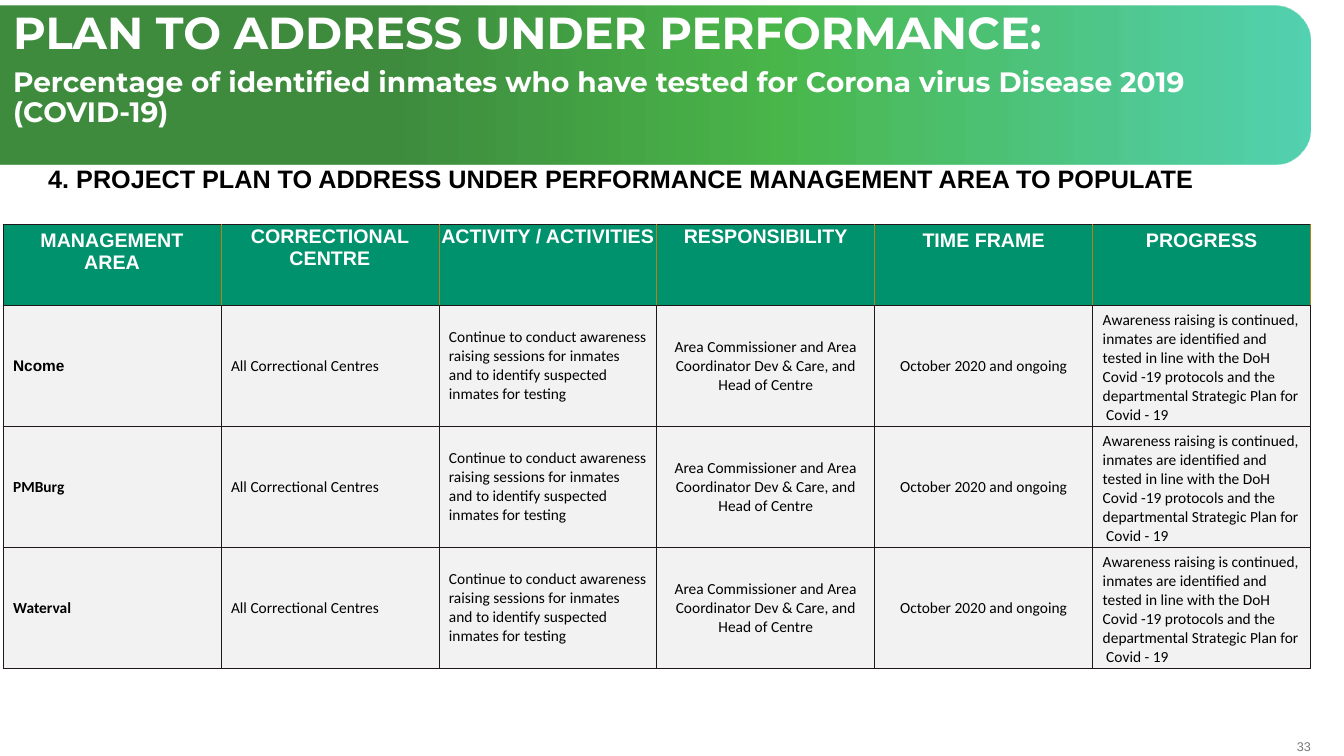
"""Build the slide with the plan to address under performance."""
from lxml import etree
from pptx import Presentation
from pptx.dml.color import RGBColor
from pptx.enum.shapes import MSO_SHAPE
from pptx.enum.text import MSO_ANCHOR, MSO_AUTO_SIZE, PP_ALIGN
from pptx.oxml import parse_xml
from pptx.oxml.ns import nsdecls, qn
from pptx.util import Inches, Pt

LEFT, CENTER, RIGHT = PP_ALIGN.LEFT, PP_ALIGN.CENTER, PP_ALIGN.RIGHT
TOP, MIDDLE = MSO_ANCHOR.TOP, MSO_ANCHOR.MIDDLE
NO_FIT = MSO_AUTO_SIZE.NONE
ROUND_TOP = MSO_SHAPE.ROUND_2_SAME_RECTANGLE
WIDE, TIGHT = (0.1, 0.05, 0.1, 0.05), (0.01, 0.01, 0.01, 0)

HEADERS = [("MANAGEMENT AREA", WIDE), ("CORRECTIONAL CENTRE", TIGHT),
           ("ACTIVITY / ACTIVITIES", TIGHT), ("RESPONSIBILITY", TIGHT),
           ("TIME FRAME", WIDE), ("PROGRESS", WIDE)]
AREAS = [("Ncome", "Arial"), ("PMBurg", "Calibri"), ("Waterval", "Calibri")]
PLAN = [
    ("All Correctional Centres", LEFT, MIDDLE),
    ("Continue to conduct awareness raising sessions for inmates and to "
     "identify suspected inmates for testing", LEFT, MIDDLE),
    ("Area Commissioner and Area Coordinator Dev & Care, and Head of Centre",
     CENTER, MIDDLE),
    ("October 2020 and ongoing", CENTER, MIDDLE),
    ("Awareness raising is continued, inmates are identified and tested in "
     "line with the DoH Covid -19 protocols and the departmental Strategic "
     "Plan for  Covid - 19", LEFT, TOP),
]


def color(value):
    """Return the colour for a hex string."""
    return RGBColor.from_string(value)


def write(para, text, size=11, font="Calibri", ink="000000", bold=False,
          align=LEFT, spacing=None, after=None):
    """Add formatted text to a paragraph."""
    para.alignment = align
    if spacing is not None:
        para.line_spacing = spacing
    if after is not None:
        para.space_after = Pt(after)
    span = para.add_run()
    span.text = text
    span.font.size = Pt(size)
    span.font.name = font
    span.font.bold = bold
    span.font.color.rgb = color(ink)


class SlideBuilder:
    """Hold the style and the current slide."""

    dark, orange = "1E1918", "BF7B17"
    header_fill, body_fill = "00926C", "F2F2F2"
    stops = [(30, "006600", 75), (59, "009900", 71), (100, "00BC8D", 67)]

    def __init__(self, page):
        """Keep the page to draw on."""
        self.page = page

    def banner(self, left, top, width, height):
        """Draw the gradient band with its rounded end to the right."""
        shape = self.page.shapes.add_shape(
            ROUND_TOP, Inches(left + (width - height) / 2),
            Inches(top - (width - height) / 2), Inches(height), Inches(width))
        shape.rotation = 90
        shape.adjustments[0] = 0.233
        shape.adjustments[1] = 0
        shape.shadow.inherit = False
        shape.line.fill.background()
        stops = "".join(
            f'<a:gs pos="{place * 1000}"><a:srgbClr val="{value}">'
            f'<a:alpha val="{alpha * 1000}"/></a:srgbClr></a:gs>'
            for place, value, alpha in self.stops)
        gradient = parse_xml(
            f'<a:gradFill {nsdecls("a")} rotWithShape="1"><a:gsLst>{stops}'
            '</a:gsLst><a:lin ang="16200000" scaled="0"/></a:gradFill>')
        shape.element.spPr.find(qn("a:prstGeom")).addnext(gradient)

    def title(self, left, top, width, height, lines):
        """Fill the title placeholder with lines of text and size."""
        title = self.page.shapes.title
        title.left, title.top = Inches(left), Inches(top)
        title.width, title.height = Inches(width), Inches(height)
        frame = title.text_frame
        frame.word_wrap = True
        frame.auto_size = NO_FIT
        frame.vertical_anchor = TOP
        for index, (text, size) in enumerate(lines):
            para = frame.add_paragraph() if index else frame.paragraphs[0]
            write(para, text, size=size, font="Montserrat", ink="FFFFFF",
                  bold=True, spacing=0.9, after=6)
        title.element.getparent().append(title.element)

    def text(self, left, top, width, height, text, margins=WIDE, anchor=TOP,
             **style):
        """Add a text box with one paragraph."""
        box = self.page.shapes.add_textbox(
            Inches(left), Inches(top), Inches(width), Inches(height))
        frame = box.text_frame
        frame.word_wrap = True
        frame.vertical_anchor = anchor
        (frame.margin_left, frame.margin_top, frame.margin_right,
         frame.margin_bottom) = map(Inches, margins)
        write(frame.paragraphs[0], text, **style)

    def cell(self, cell, text, fill, sides, anchor=MIDDLE, margins=WIDE,
             **style):
        """Fill and border one cell; sides are left, right, top, bottom."""
        cell.fill.solid()
        cell.fill.fore_color.rgb = color(fill)
        cell.vertical_anchor = anchor
        (cell.margin_left, cell.margin_top, cell.margin_right,
         cell.margin_bottom) = map(Inches, margins)
        write(cell.text_frame.paragraphs[0], text, **style)
        properties = cell._tc.get_or_add_tcPr()
        for index, (side, ink) in enumerate(zip("LRTB", sides)):
            line = etree.Element(qn(f"a:ln{side}"), w=str(Pt(0.5)))
            solid = etree.SubElement(line, qn("a:solidFill"))
            etree.SubElement(solid, qn("a:srgbClr"), val=ink)
            properties.insert(index, line)

    def table(self, left, top, width, header_height, row_height):
        """Add the plan table with a row for each management area."""
        rows, columns = len(AREAS) + 1, len(HEADERS)
        table = self.page.shapes.add_table(
            rows, columns, Inches(left), Inches(top), Inches(width),
            Inches(header_height + row_height * len(AREAS))).table
        table.first_row = table.horz_banding = False
        for index, row in enumerate(table.rows):
            row.height = Inches(row_height if index else header_height)
        for column, (text, margins) in enumerate(HEADERS):
            start = self.orange if column else self.dark
            self.cell(table.cell(0, column), text, self.header_fill,
                      (start, self.orange, self.dark, self.dark), anchor=TOP,
                      margins=margins, size=14, font="Arial", ink="FFFFFF",
                      bold=True, align=CENTER)
        sides = [self.dark] * 4
        for row, (area, font) in enumerate(AREAS, 1):
            self.cell(table.cell(row, 0), area, self.body_fill, sides,
                      font=font, bold=True)
            for column, (text, align, anchor) in enumerate(PLAN, 1):
                self.cell(table.cell(row, column), text, self.body_fill,
                          sides, anchor=anchor, align=align)


def main():
    """Build and save the deck."""
    deck = Presentation()
    deck.slide_width, deck.slide_height = Inches(13.33), Inches(7.5)
    builder = SlideBuilder(deck.slides.add_slide(deck.slide_layouts[5]))
    builder.text(12.61, 7.33, 0.39, 0.15, "33", margins=(0, 0, 0, 0),
                 anchor=MIDDLE, size=9, font="Arial", ink="77787B",
                 align=RIGHT)
    builder.banner(0, 0.06, 13, 1.57)
    builder.text(0.38, 1.57, 12.45, 0.4,
                 "4. PROJECT PLAN TO ADDRESS UNDER PERFORMANCE MANAGEMENT "
                 "AREA TO POPULATE", size=18, font="Arial", bold=True)
    builder.table(0.03, 2.23, 12.97, 0.8, 1.18)
    builder.title(0.03, 0.06, 11.98, 0.57, [
        ("PLAN TO ADDRESS UNDER PERFORMANCE:", 32),
        ("Percentage of identified inmates who have tested for Corona virus "
         "Disease 2019 (COVID-19)", 20)])
    deck.save("out.pptx")


if __name__ == "__main__":
    main()
